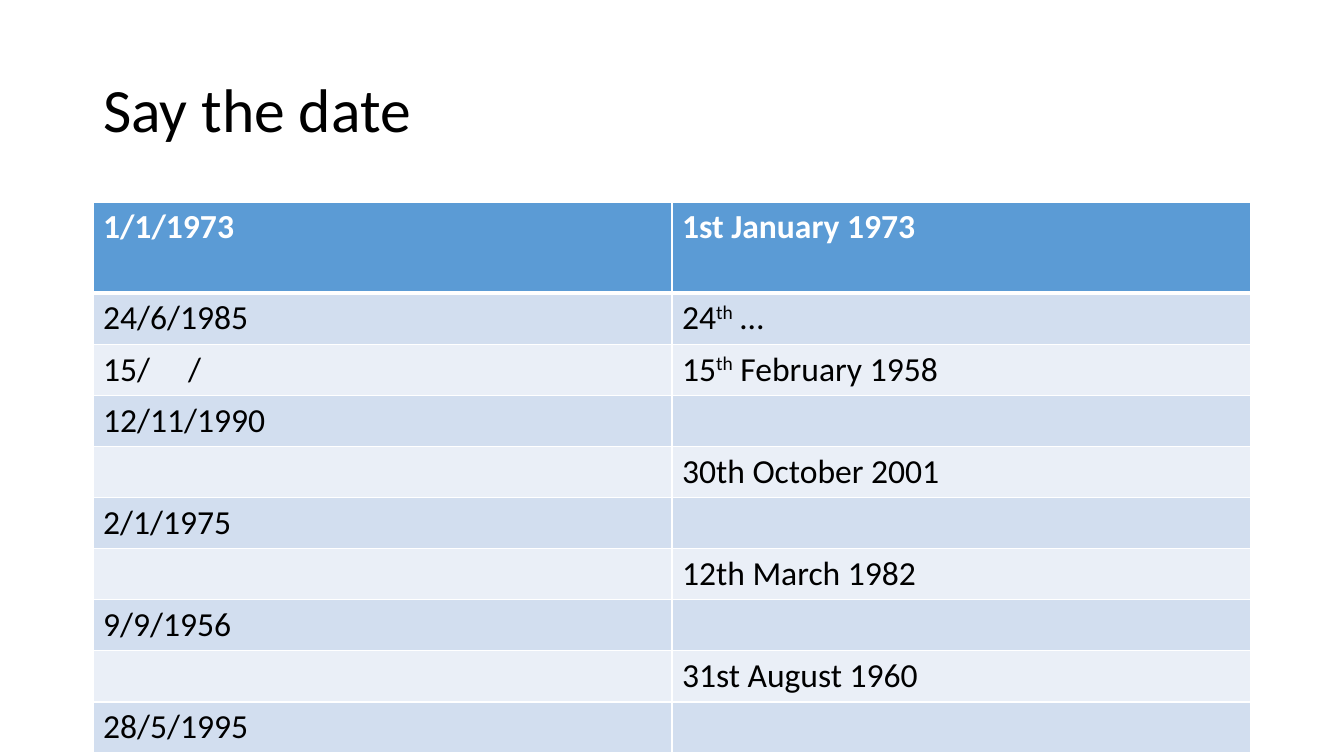
from lxml import etree
from pptx import Presentation
from pptx import util as u
from pptx.dml.color import RGBColor
from pptx.enum import text
from pptx.oxml.ns import qn

# Content: a cell is a list of (text, superscript) runs or a plain string
TITLE = "Say the date"
DATES = [
    ("1/1/1973", "1st January 1973"),
    ("24/6/1985", [("24", False), ("th", True), (" …", False)]),
    ("15/     /", [("15", False), ("th", True), (" February 1958", False)]),
    ("12/11/1990", ""),
    ("", "30th October 2001"),
    ("2/1/1975", ""),
    ("", "12th March 1982"),
    ("9/9/1956", ""),
    ("", "31st August 1960"),
    ("28/5/1995", ""),
]

FONT = "Calibri"
BLACK = RGBColor(0x00, 0x00, 0x00)
WHITE = RGBColor(0xFF, 0xFF, 0xFF)
HEADER = RGBColor(0x5B, 0x9B, 0xD5)
BANDS = [RGBColor(0xEA, 0xEF, 0xF7), RGBColor(0xD2, 0xDE, 0xEF)]

# Lengths in px
SLIDE_W, SLIDE_H = 1344, 756
LEFT, WIDTH = 93, 1158
TITLE_TOP, TITLE_H = 40, 146
TABLE_TOP, HEADER_H, ROW_H = 202, 91, 51


def px(n):
    return u.Emu(round(n * 914400 / 100.8))


def style_font(font, size, color, bold=False):
    font.name, font.size, font.bold = FONT, u.Pt(size), bold
    font.color.rgb = color


def add_borders(cell, top, bottom):
    tcPr = cell._tc.get_or_add_tcPr()
    for i, (side, width) in enumerate(zip("LRTB", (1, 1, top, bottom))):
        ln = etree.Element(qn("a:ln" + side), w=str(u.Pt(width)))
        fill = etree.SubElement(ln, qn("a:solidFill"))
        etree.SubElement(fill, qn("a:srgbClr"), val=str(WHITE))
        tcPr.insert(i, ln)


def fill_cell(cell, content, row):
    is_header = row == 0
    color = WHITE if is_header else BLACK
    cell.fill.solid()
    cell.fill.fore_color.rgb = HEADER if is_header else BANDS[row % 2]
    add_borders(cell, 3 if row == 1 else 1, 3 if is_header else 1)
    p = cell.text_frame.paragraphs[0]
    if not content:
        p.font.size = u.Pt(24)
        return
    runs = [(content, False)] if isinstance(content, str) else content
    for words, raised in runs:
        r = p.add_run()
        r.text = words
        style_font(r.font, 24, color, is_header)
        if raised:
            r._r.get_or_add_rPr().set("baseline", "30000")


def main():
    prs = Presentation()
    prs.slide_width, prs.slide_height = px(SLIDE_W), px(SLIDE_H)
    s = prs.slides.add_slide(prs.slide_layouts[5])

    # Title
    sp = s.shapes.title
    sp.left, sp.top = px(LEFT), px(TITLE_TOP)
    sp.width, sp.height = px(WIDTH), px(TITLE_H)
    tf = sp.text_frame
    tf.auto_size = text.MSO_AUTO_SIZE.NONE
    tf.vertical_anchor = text.MSO_ANCHOR.MIDDLE
    p = tf.paragraphs[0]
    p.alignment = text.PP_ALIGN.LEFT
    p.line_spacing = 0.9
    r = p.add_run()
    r.text = TITLE
    style_font(r.font, 44, BLACK)

    # Table of dates
    height = HEADER_H + ROW_H * (len(DATES) - 1)
    table = s.shapes.add_table(len(DATES), 2, px(LEFT), px(TABLE_TOP),
                               px(WIDTH), px(height)).table
    for i, pair in enumerate(DATES):
        table.rows[i].height = px(ROW_H if i else HEADER_H)
        for j, content in enumerate(pair):
            fill_cell(table.cell(i, j), content, i)

    prs.save("out.pptx")


if __name__ == "__main__":
    main()
